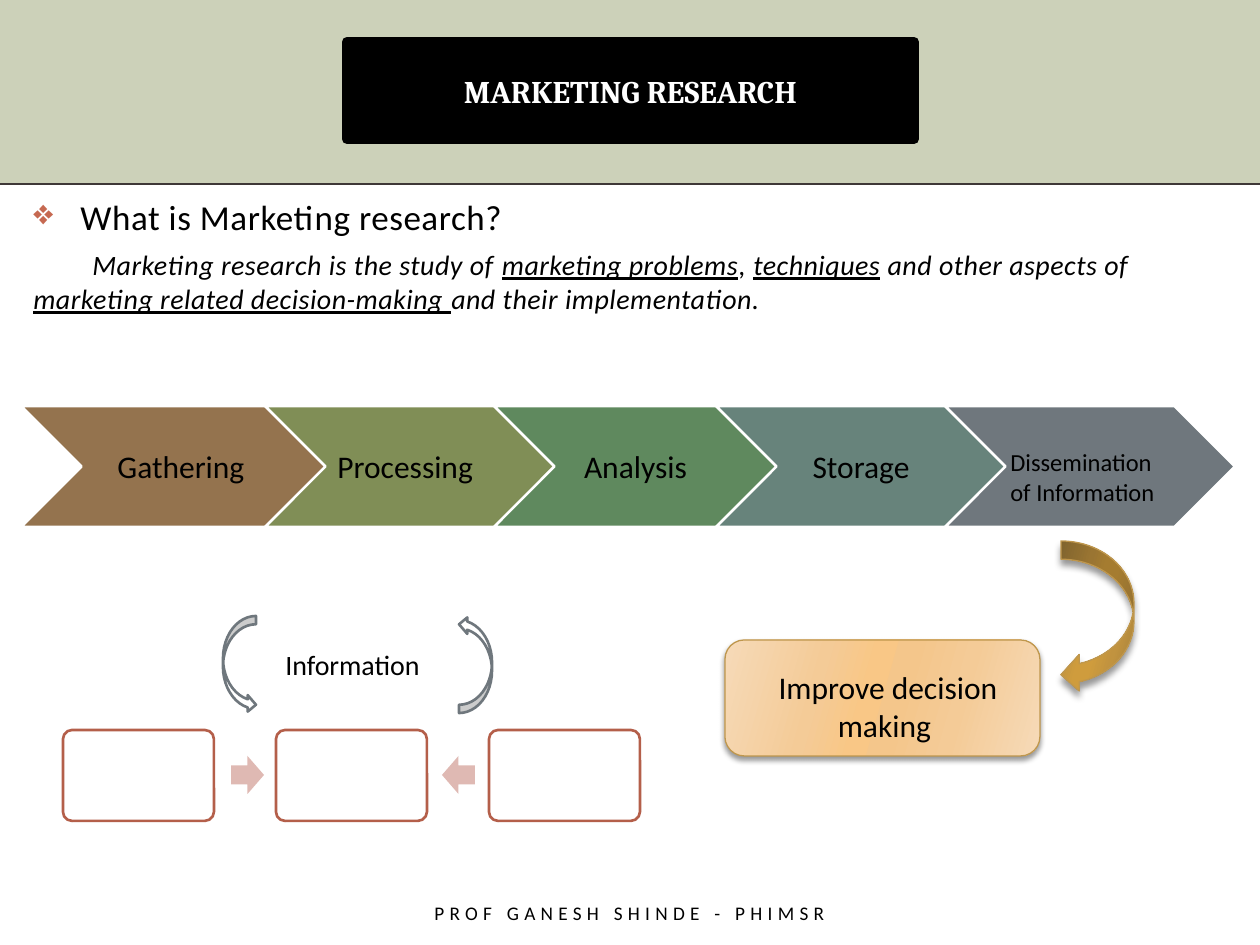
from lxml import etree
from pptx import Presentation
from pptx.dml.color import RGBColor as Rgb
from pptx.enum.shapes import MSO_CONNECTOR as Con, MSO_SHAPE as Geo
from pptx.enum.text import MSO_ANCHOR as Anc, MSO_AUTO_SIZE as Auto, PP_ALIGN as Al
from pptx.oxml import parse_xml
from pptx.oxml.ns import nsdecls, qn
from pptx.util import Emu, Pt

SCALE = 914400 / 126
BLACK, WHITE = "000000", "FFFFFF"


def px(n):
    return Emu(round(n * SCALE))


def tint(code):
    return Rgb.from_string(code)


class Deck:
    font = "Calibri"
    ink = BLACK

    def __init__(self, wide, high, back):
        self.prs = Presentation()
        self.prs.slide_width, self.prs.slide_height = px(wide), px(high)
        self.slide = self.prs.slides.add_slide(self.prs.slide_layouts[6])
        fill = self.slide.background.fill
        fill.solid()
        fill.fore_color.rgb = tint(back)

    def shape(self, geo, box, fill, line=None, width=1.5, turn=0, adj=None):
        item = self.slide.shapes.add_shape(geo, *map(px, box))
        item.shadow.inherit = False
        item.rotation = turn
        if adj is not None:
            item.adjustments[0] = adj
        if isinstance(fill, str):
            item.fill.solid()
            item.fill.fore_color.rgb = tint(fill)
        else:
            self.blend(item, fill)
        if line:
            item.line.color.rgb = tint(line)
            item.line.width = Pt(width)
        else:
            item.line.fill.background()
        return item

    def blend(self, item, stops):
        marks = "".join(
            f'<a:gs pos="{at * 1000}"><a:srgbClr val="{code}"/></a:gs>'
            for at, code in stops)
        grad = parse_xml(f'<a:gradFill {nsdecls("a")} rotWithShape="1"><a:gsLst>{marks}'
                         '</a:gsLst><a:lin ang="960000" scaled="0"/></a:gradFill>')
        item._element.spPr.find(qn("a:prstGeom")).addnext(grad)

    def shade(self, item, blur, dist):
        glow = item._element.spPr.find(qn("a:effectLst"))
        glow.append(parse_xml(
            f'<a:outerShdw {nsdecls("a")} blurRad="{Pt(blur)}" dist="{Pt(dist)}" '
            'dir="5400000" algn="ctr" rotWithShape="0"><a:srgbClr val="000000">'
            '<a:alpha val="40000"/></a:srgbClr></a:outerShdw>'))

    def line(self, x1, y1, x2, y2, code, width):
        item = self.slide.shapes.add_connector(Con.STRAIGHT, *map(px, (x1, y1, x2, y2)))
        item.line.color.rgb = tint(code)
        item.line.width = Pt(width)
        etree.SubElement(item._element.spPr, qn("a:effectLst"))

    def frame(self, box, **style):
        area = self.slide.shapes.add_textbox(*map(px, box)).text_frame
        for key, val in ({"word_wrap": True} | style).items():
            setattr(area, key, val)
        return area

    def para(self, part, runs, size, space=0, ink=None, font=None, **style):
        for key, val in style.items():
            setattr(part, key, val)
        for text, marks in runs:
            run = part.add_run()
            run.text = text
            look = {"name": font or self.font, "size": Pt(size)} | marks
            for key, val in look.items():
                setattr(run.font, key, val)
            run.font.color.rgb = tint(ink or self.ink)
            if space:
                run._r.get_or_add_rPr().set("spc", str(space))

    def bullet(self, part, sign, code, hang):
        props = part._p.get_or_add_pPr()
        props.set("marL", str(px(hang)))
        props.set("indent", str(-px(hang)))
        color = etree.SubElement(props, qn("a:buClr"))
        etree.SubElement(color, qn("a:srgbClr"), val=code)
        etree.SubElement(props, qn("a:buChar"), char=sign)

    def label(self, text, box, size=18, align=Al.LEFT):
        area = self.frame(box, auto_size=Auto.SHAPE_TO_FIT_TEXT)
        self.para(area.paragraphs[0], [(text, {})], size, alignment=align)


def main():
    deck = Deck(1260, 945, "CCD1B9")
    deck.shape(Geo.RECTANGLE, (0, 184, 1260, 761), WHITE)
    deck.line(0, 184, 1260, 184, "3E3737", 1)

    body = deck.frame((21, 189, 1218, 704))
    head = body.paragraphs[0]
    deck.para(head, [("What is Marketing research?", {})], 20, 30, space_before=Pt(6))
    deck.bullet(head, "❖", "C66951", 47)
    plain = {"italic": True}
    under = plain | {"underline": True}
    text = body.add_paragraph()
    deck.para(text, [
        ("Marketing research is the study of ", plain), ("marketing problems", under),
        (", ", plain), ("techniques", under), (" and other aspects of ", plain),
        ("marketing related decision-making ", under),
        ("and their implementation.", plain)], 16, 30, space_before=Pt(6))
    text._p.get_or_add_pPr().set("indent", str(px(59)))

    title = deck.shape(Geo.RECTANGLE, (347, 42, 567, 97), BLACK, BLACK, 6).text_frame
    title.vertical_anchor = Anc.MIDDLE
    deck.para(title.paragraphs[0], [("MARKETING RESEARCH", {"bold": True})], 18,
              ink=WHITE, font="Cambria", alignment=Al.CENTER, space_before=Pt(4))
    foot = deck.frame((199, 893, 861, 40), vertical_anchor=Anc.MIDDLE)
    deck.para(foot.paragraphs[0], [("PROF GANESH SHINDE - PHIMSR", {})], 11, 300,
              alignment=Al.CENTER)

    steps = [(21, 319, "94734E"), (265, 290, "808E56"), (494, 290, "5F895E"),
             (716, 290, "67837B"), (945, 290, "6F777D")]
    for left, wide, code in steps:
        deck.shape(Geo.CHEVRON, (left, 406, wide, 121), code, WHITE)
    names = [("Gathering", 105, 158, 18, Al.LEFT), ("Processing", 325, 168, 18, Al.LEFT),
             ("Analysis", 546, 179, 18, Al.CENTER), ("Storage", 777, 168, 18, Al.CENTER),
             ("Dissemination of Information", 998, 179, 14, Al.LEFT)]
    for name, left, wide, size, align in names:
        deck.label(name, (left, 441, wide, 72 if size == 14 else 50), size, align)

    spots = (0, 30, 45, 55, 73, 100)
    gold = ("A17D3A", "C1933F", "CF9C3D", "CF9C3D", "C1933F", "A17D3A")
    peach = ("F6DAB8", "F4CB97", "F9C786", "F4C68B", "F4CB97", "F6DAB8")
    bend = deck.shape(Geo.CURVED_LEFT_ARROW, (1061, 541, 73, 152),
                      list(zip(spots, gold)), "BF974D", 0.75)
    deck.shade(bend, 4, 3.3)
    goal = deck.shape(Geo.ROUNDED_RECTANGLE, (725, 640, 315, 116),
                      list(zip(spots, peach)), "BF974D", 0.75)
    deck.shade(goal, 3, 2)
    deck.label("Improve decision making ", (746, 662, 284, 89), align=Al.CENTER)

    for i in range(3):
        deck.shape(Geo.ROUNDED_RECTANGLE, (63 + 213 * i, 730, 151, 91), WHITE,
                   "B45F4A", adj=0.1)
    for geo, left in ((Geo.RIGHT_ARROW, 231), (Geo.LEFT_ARROW, 442)):
        deck.shape(geo, (left, 756, 33, 38), "DFB9B3")
    for left, turn in ((459, 180), (223, 0)):
        deck.shape(Geo.CURVED_RIGHT_ARROW, (left, 616, 33, 97), WHITE, "6F777D", turn=turn)
    deck.label("Information", (273, 641, 165, 47), 16)
    deck.prs.save("out.pptx")


if __name__ == "__main__":
    main()
